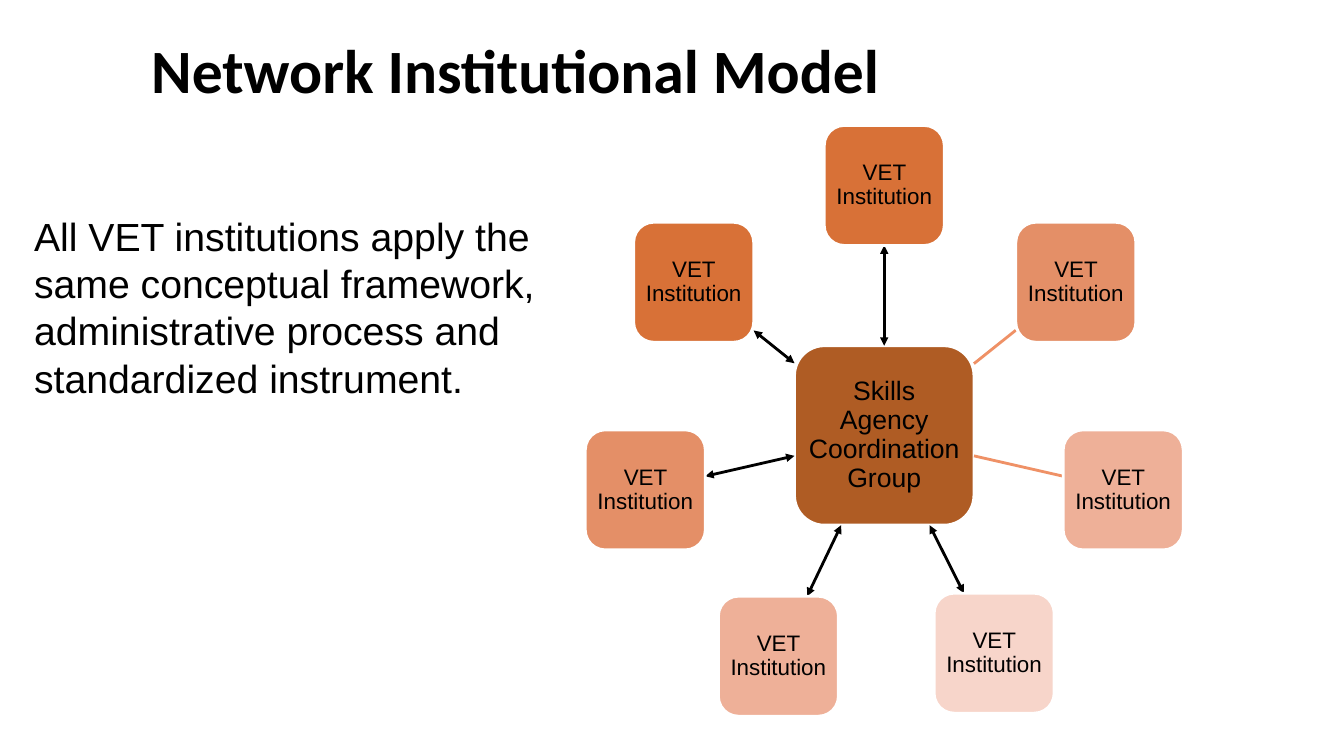
from dataclasses import dataclass

import pptx
import pptx.dml.color
import pptx.enum.shapes
import pptx.enum.text
import pptx.oxml
import pptx.oxml.ns
import pptx.util

EMU_PER_PX = 9144  # 100 px to the inch
Pt = pptx.util.Pt
Align = pptx.enum.text.PP_ALIGN
Anchor = pptx.enum.text.MSO_ANCHOR


def px(length):
    return pptx.util.Emu(round(length * EMU_PER_PX))


def rgb(colour):
    return pptx.dml.color.RGBColor.from_string(colour)


@dataclass(frozen=True)
class Theme:
    heading_font: str = "Calibri"
    body_font: str = "Arial"
    title_size: int = 44
    body_size: int = 28
    hub_size: int = 19
    node_size: int = 16
    line_width: int = 2
    ink: str = "000000"
    paper: str = "FFFFFF"
    hub: str = "AF5C24"
    strong: str = "D87137"
    medium: str = "E48F67"
    light: str = "EEB098"
    pale: str = "F7D5CA"
    plain_link: str = "EF9166"


@dataclass(frozen=True)
class Box:
    """A square given by its centre and side."""
    x: float
    y: float
    side: int

    def edge_towards(self, other):
        dx, dy = other.x - self.x, other.y - self.y
        scale = self.side / 2 / max(abs(dx), abs(dy))
        return px(self.x + dx * scale), px(self.y + dy * scale)


class SlideBuilder:
    def __init__(self, slide, theme):
        self.slide = slide
        self.theme = theme

    def style_text(self, paragraph, size, font, bold=False):
        paragraph.font.name = font
        paragraph.font.size = Pt(size)
        paragraph.font.bold = bold
        paragraph.font.color.rgb = rgb(self.theme.ink)

    def title(self, text, left, top, width, height):
        shape = self.slide.shapes.title
        shape.left, shape.top = px(left), px(top)
        shape.width, shape.height = px(width), px(height)
        frame = shape.text_frame
        frame.text = text
        frame.vertical_anchor = Anchor.MIDDLE
        paragraph = frame.paragraphs[0]
        paragraph.alignment = Align.LEFT
        paragraph.line_spacing = 0.9
        self.style_text(paragraph, self.theme.title_size, self.theme.heading_font, True)

    def text(self, text, left, top, width, height):
        shape = self.slide.shapes.add_textbox(px(left), px(top), px(width), px(height))
        frame = shape.text_frame
        frame.word_wrap = True
        frame.text = text
        self.style_text(frame.paragraphs[0], self.theme.body_size, self.theme.body_font)

    def rounded_box(self, text, box, fill, size, inset):
        shape = self.slide.shapes.add_shape(
            pptx.enum.shapes.MSO_SHAPE.ROUNDED_RECTANGLE,
            px(box.x - box.side / 2), px(box.y - box.side / 2), px(box.side), px(box.side))
        shape.shadow.inherit = False
        shape.fill.solid()
        shape.fill.fore_color.rgb = rgb(fill)
        shape.line.color.rgb = rgb(self.theme.paper)
        shape.line.width = Pt(self.theme.line_width)
        frame = shape.text_frame
        frame.word_wrap = True
        frame.vertical_anchor = Anchor.MIDDLE
        frame.margin_left = frame.margin_right = px(inset)
        frame.margin_top = frame.margin_bottom = px(inset)
        frame.text = text
        paragraph = frame.paragraphs[0]
        paragraph.alignment = Align.CENTER
        paragraph.line_spacing = 0.9
        self.style_text(paragraph, size, self.theme.body_font)

    def link(self, start, end, two_way):
        connector = self.slide.shapes.add_connector(
            pptx.enum.shapes.MSO_CONNECTOR.STRAIGHT,
            *start.edge_towards(end), *end.edge_towards(start))
        connector.line.color.rgb = rgb(self.theme.ink if two_way else self.theme.plain_link)
        connector.line.width = Pt(self.theme.line_width)
        if two_way:
            line = connector.line._get_or_add_ln()
            for tag in ("a:headEnd", "a:tailEnd"):
                pptx.oxml.ns.qn(tag)
                line.append(pptx.oxml.parse_xml(
                    f'<{tag} {pptx.oxml.ns.nsdecls("a")} type="triangle"/>'))
        connector._element.spPr.append(pptx.oxml.parse_xml(
            f'<a:effectLst {pptx.oxml.ns.nsdecls("a")}/>'))


def main():
    presentation = pptx.Presentation()
    presentation.slide_width, presentation.slide_height = px(1333), px(750)
    theme = Theme()
    slide = presentation.slides.add_slide(presentation.slide_layouts[5])
    builder = SlideBuilder(slide, theme)

    builder.title("Network Institutional Model", 140, 0, 1150, 145)

    # Hub of the network
    hub = Box(877, 432, 178)
    builder.rounded_box("Skills Agency Coordination Group", hub, theme.hub, theme.hub_size, 5)

    # Institutions clockwise from the top: centre, fill, two-way link
    institutions = [
        (877, 184, theme.strong, True),
        (1067, 280, theme.medium, False),
        (1114, 486, theme.light, False),
        (986, 648, theme.pale, True),
        (772, 651, theme.light, True),
        (640, 486, theme.medium, True),
        (688, 280, theme.strong, True),
    ]
    for x, y, fill, two_way in institutions:
        institution = Box(x, y, 119)
        builder.link(hub, institution, two_way)
        builder.rounded_box("VET Institution", institution, fill, theme.node_size, 4)

    # Explanation on the left
    builder.text("All VET institutions apply the same conceptual framework, "
                 "administrative process and standardized instrument.",
                 24, 206, 550, 199)

    presentation.save("out.pptx")


if __name__ == "__main__":
    main()
